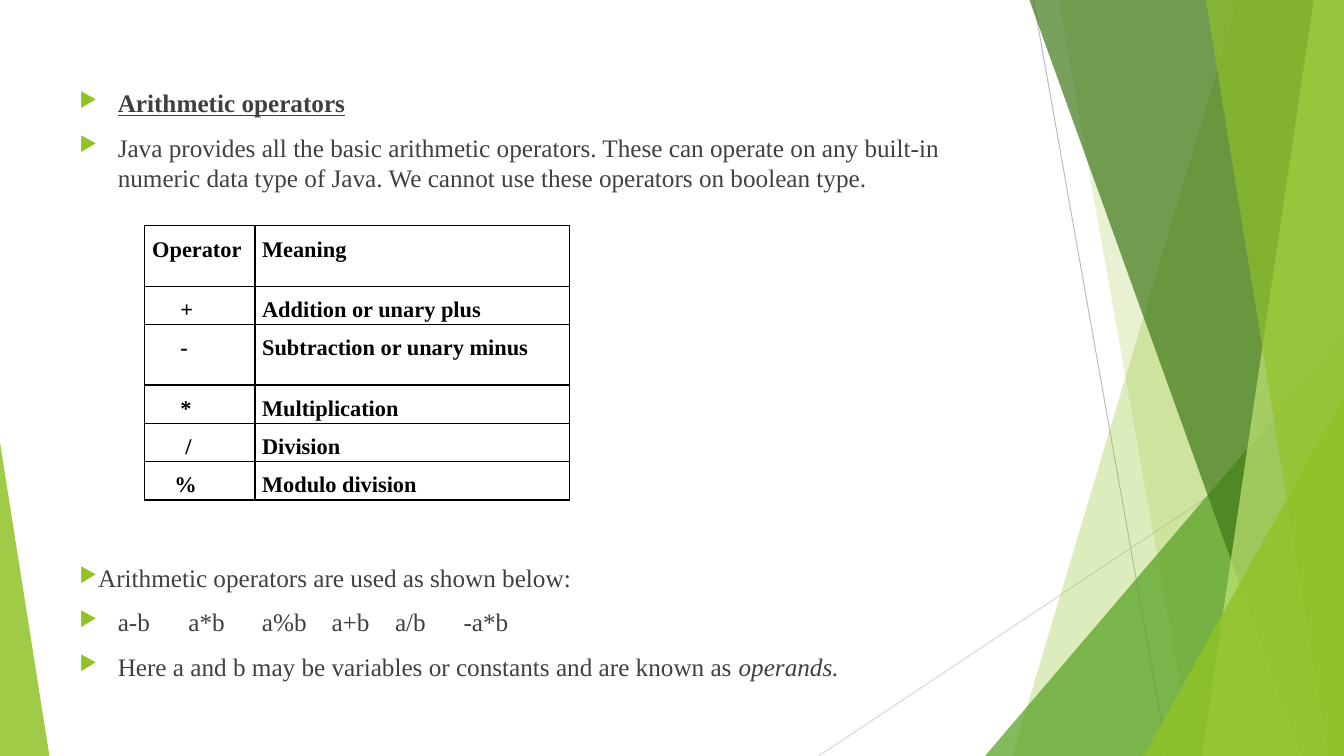
from lxml import etree
from pptx import Presentation
from pptx.dml.color import RGBColor
from pptx.enum.shapes import MSO_CONNECTOR, MSO_SHAPE
from pptx.oxml.ns import qn
from pptx.util import Inches, Pt

STRAIGHT = MSO_CONNECTOR.STRAIGHT
TRIANGLE = MSO_SHAPE.ISOSCELES_TRIANGLE
WIDTH, HEIGHT = 13.33, 7.5
LIME = "90C226"


def colour(code):
    return RGBColor.from_string(code)


def add_span(para, text, size, code, **formats):
    span = para.add_run()
    span.text = text
    span.font.color.rgb = colour(code)
    settings = {"name": "Times New Roman", "size": Pt(size), **formats}
    for name, value in settings.items():
        setattr(span.font, name, value)


deck = Presentation()
deck.slide_width, deck.slide_height = Inches(WIDTH), Inches(HEIGHT)
page = deck.slides.add_slide(deck.slide_layouts[6])

guides = [((10.25, 0), (11.58, HEIGHT), "BFBFBF"), ((WIDTH, 4.03), (8.12, HEIGHT), "D9D9D9")]
for start, end, code in guides:
    guide = page.shapes.add_connector(STRAIGHT, *map(Inches, start + end))
    guide.line.color.rgb = colour(code)
    guide.line.width = Pt(0.75)
    etree.SubElement(guide.element.spPr, qn("a:effectLst"))

facets = [
    ("band", (12.28, 10.04), LIME, 30),
    ("band", (10.5, 11.83), LIME, 20),
    ("triangle", (9.77, 3.33, 3.56, 1), "54A021", 72),
    ("band", (10.21, 12.91), "3F7819", 70),
    ("band", (13.03, 11.92), "C0E474", 70),
    ("band", (11.96, 13.18), LIME, 65),
    ("triangle", (11.34, 3.93, 1.99, 1), LIME, 80),
    ("triangle", (0, 4.39, 0.49, 0), LIME, 85),
]
for kind, geometry, code, opacity in facets:
    if kind == "band":
        top_left, bottom_left = geometry
        outline = page.shapes.build_freeform(Inches(top_left), 0)
        corners = [(WIDTH, 0), (WIDTH, HEIGHT), (bottom_left, HEIGHT)]
        outline.add_line_segments([(Inches(x), Inches(y)) for x, y in corners])
        facet = outline.convert_to_shape()
    else:
        left, top, width, apex = geometry
        box = map(Inches, (left, top, width, HEIGHT - top))
        facet = page.shapes.add_shape(TRIANGLE, *box)
        facet.adjustments[0] = apex
    facet.shadow.inherit = False
    facet.line.fill.background()
    facet.fill.solid()
    facet.fill.fore_color.rgb = colour(code)
    tint = facet.element.spPr.find(qn("a:solidFill"))[0]
    etree.SubElement(tint, qn("a:alpha"), val=str(opacity * 1000))

bold_underline = {"bold": True, "underline": True}
text_blocks = [
    (0.82, 1.3, [
        (0.38, [("Arithmetic operators", bold_underline)]),
        (0.38, [("Java provides all the basic arithmetic operators. These can operate on any "
                 "built-in numeric data type of Java. We cannot use these operators on "
                 "boolean type.", {})]),
    ]),
    (5.53, 1.4, [
        (0.15, [("Arithmetic operators are used as shown below:", {})]),
        (0.38, [("a-b\ta*b\ta%b\ta+b\ta/b\t-a*b", {})]),
        (0.38, [("Here a and b may be variables or constants and are known as ", {}),
                ("operands.", {"italic": True})]),
    ]),
]
tab_stops = [1.08, 1.81, 2.5, 3.13, 3.81]
for top, height, paragraphs in text_blocks:
    box = page.shapes.add_textbox(Inches(0.69), Inches(top), Inches(9.07), Inches(height))
    frame = box.text_frame
    frame.word_wrap = True
    for index, (indent, spans) in enumerate(paragraphs):
        para = frame.add_paragraph() if index else frame.paragraphs[0]
        para.space_before = Pt(10 if index else 0)
        for text, formats in spans:
            add_span(para, text, 18, "404040", **formats)
        layout = para._p.get_or_add_pPr()
        layout.set("marL", str(Inches(indent)))
        layout.set("indent", str(-Inches(indent)))
        bullet_colour = etree.SubElement(layout, qn("a:buClr"))
        etree.SubElement(bullet_colour, qn("a:srgbClr"), val=LIME)
        etree.SubElement(layout, qn("a:buSzPct"), val="80000")
        etree.SubElement(layout, qn("a:buChar"), char="▶")
        if "\t" in spans[0][0]:
            tabs = etree.SubElement(layout, qn("a:tabLst"))
            for stop in tab_stops:
                etree.SubElement(tabs, qn("a:tab"), pos=str(Inches(stop)), algn="l")

operators = [
    ("Operator", "Meaning", 0.08, 0.6),
    ("+", "Addition or unary plus", 0.36, 0.38),
    ("-", "Subtraction or unary minus", 0.36, 0.6),
    ("*", "Multiplication", 0.36, 0.38),
    ("/", "Division", 0.41, 0.38),
    ("%", "Modulo division", 0.3, 0.38),
]
table_box = map(Inches, (1.43, 2.24, 4.22, 2.72))
table = page.shapes.add_table(len(operators), 2, *table_box).table
table.first_row = table.horz_banding = False
table.columns[0].width, table.columns[1].width = Inches(1.1), Inches(3.12)
for row, (symbol, meaning, indent, height) in enumerate(operators):
    table.rows[row].height = Inches(height)
    for column, (text, left) in enumerate([(symbol, indent), (meaning, 0.07)]):
        cell = table.cell(row, column)
        cell.margin_left, cell.margin_top = Inches(left), Inches(0.18)
        cell.margin_right = cell.margin_bottom = 0
        para = cell.text_frame.paragraphs[0]
        para.line_spacing = Pt(12.8)
        add_span(para, text, 16, "000000", bold=True)
        edges = cell._tc.get_or_add_tcPr()
        for side in ("lnL", "lnR", "lnT", "lnB"):
            edge = etree.SubElement(edges, qn(f"a:{side}"), w=str(Pt(1)))
            ink = etree.SubElement(edge, qn("a:solidFill"))
            etree.SubElement(ink, qn("a:srgbClr"), val="000000")
        cell.fill.solid()
        cell.fill.fore_color.rgb = colour("FFFFFF")

deck.save("out.pptx")
